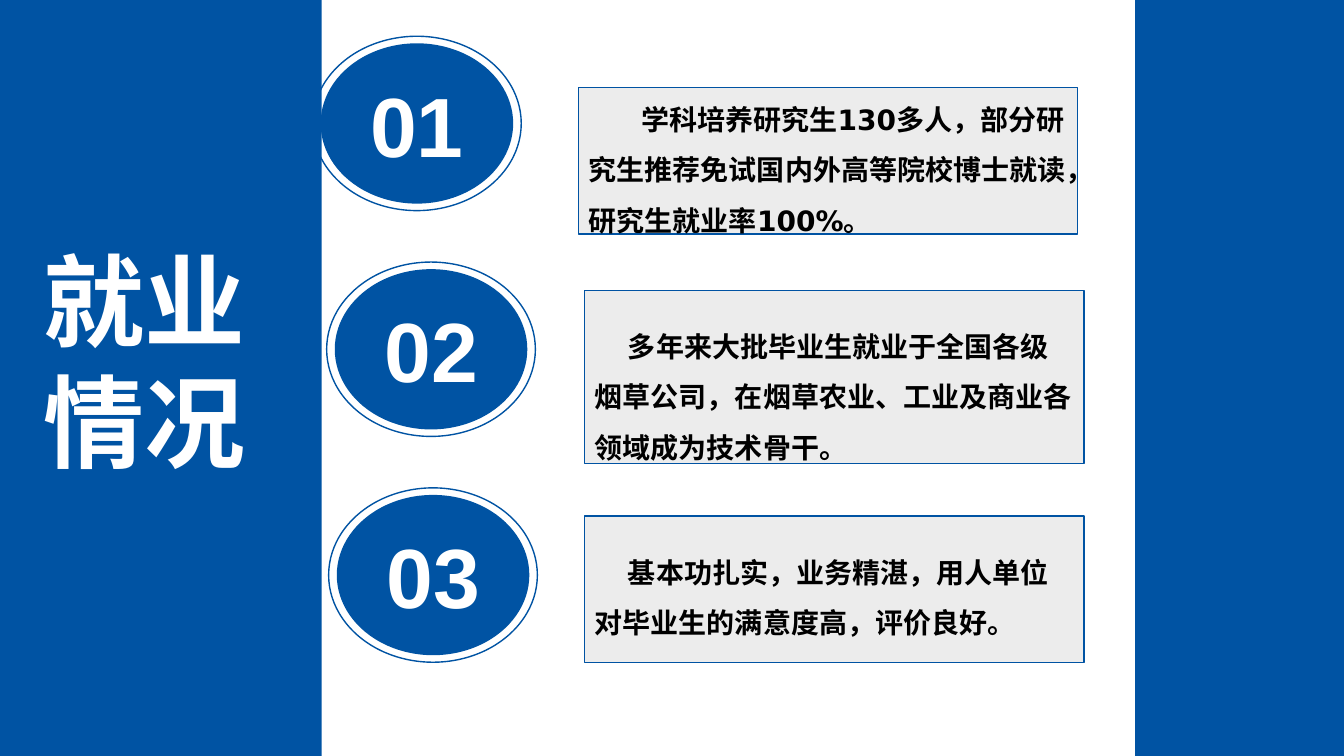
from dataclasses import dataclass

import pptx
import pptx.dml.color
import pptx.enum.shapes
import pptx.enum.text
import pptx.oxml.ns
import pptx.util

EMU_PER_PX = 9144  # 100 px to the inch
COLORS = {"blue": "0053A3", "grey": "ECECEC", "white": "FFFFFF", "black": "000000"}
CJK_FONT = "Noto Sans CJK SC"
SLIDE_WIDTH, SLIDE_HEIGHT = 1333, 750
RECTANGLE = pptx.enum.shapes.MSO_SHAPE.RECTANGLE
OVAL = pptx.enum.shapes.MSO_SHAPE.OVAL

DISC_WIDTH, DISC_HEIGHT = 191, 159
FIRST_DISC_TOP, DISC_PITCH = 43, 224
RING_GAP_X, RING_GAP_Y = 8, 7
PANEL_WIDTH = 495


@dataclass
class Item:
    disc_left: int
    panel_left: int
    panel_top: int
    panel_height: int
    text_top: int
    text_height: int
    indent: int
    text: str


ITEMS = [
    Item(318, 574, 87, 145, 80, 162, 52,
         "学科培养研究生130多人，部分研究生推荐免试国内外高等院校博士就读，研究生就业率100%。"),
    Item(332, 580, 288, 172, 305, 162, 33,
         "多年来大批毕业生就业于全国各级烟草公司，在烟草农业、工业及商业各领域成为技术骨干。"),
    Item(334, 580, 512, 145, 529, 105, 33,
         "基本功扎实，业务精湛，用人单位对毕业生的满意度高，评价良好。"),
]


def px(length: int) -> pptx.util.Emu:
    return pptx.util.Emu(length * EMU_PER_PX)


def rgb(name: str) -> pptx.dml.color.RGBColor:
    return pptx.dml.color.RGBColor.from_string(COLORS[name])


def add_box(slide, kind, left: int, top: int, width: int, height: int,
            fill: str = "", line: str = ""):
    shape = slide.shapes.add_shape(kind, px(left), px(top), px(width), px(height))
    shape.shadow.inherit = False
    if fill:
        shape.fill.solid()
        shape.fill.fore_color.rgb = rgb(fill)
    else:
        shape.fill.background()
    if line:
        shape.line.color.rgb = rgb(line)
        shape.line.width = pptx.util.Pt(1)
    else:
        shape.line.fill.background()
    return shape


def write(shape, text: str, size: int, latin: str, color: str, centered: bool = True):
    """Fill a shape with one bold paragraph and return the paragraph."""
    shape.text_frame.text = text
    shape.text_frame.word_wrap = True
    paragraph = shape.text_frame.paragraphs[0]
    align = pptx.enum.text.PP_ALIGN
    paragraph.alignment = align.CENTER if centered else align.LEFT
    font = paragraph.runs[0].font
    font.size, font.bold, font.name = pptx.util.Pt(size), True, latin
    font.color.rgb = rgb(color)
    properties = paragraph.runs[0].font._element
    east_asian = properties.makeelement(pptx.oxml.ns.qn("a:ea"), {"typeface": CJK_FONT})
    properties.find(pptx.oxml.ns.qn("a:latin")).addnext(east_asian)
    return paragraph


def add_title(slide, text: str) -> None:
    title = slide.shapes.title
    title.left, title.top, title.width, title.height = px(11), px(232), px(264), px(252)
    write(title, text, 72, CJK_FONT, "white")
    title.text_frame.auto_size = pptx.enum.text.MSO_AUTO_SIZE.NONE
    title.text_frame.vertical_anchor = pptx.enum.text.MSO_ANCHOR.TOP
    title.element.getparent().append(title.element)  # in front of the side bands


def add_number(slide, number: int, left: int) -> None:
    top = FIRST_DISC_TOP + (number - 1) * DISC_PITCH
    disc = add_box(slide, OVAL, left, top, DISC_WIDTH, DISC_HEIGHT, fill="blue")
    write(disc, f"{number:02d}", 60, "Arial", "white")
    disc.text_frame.vertical_anchor = pptx.enum.text.MSO_ANCHOR.MIDDLE
    add_box(slide, OVAL, left - RING_GAP_X, top - RING_GAP_Y,
            DISC_WIDTH + 2 * RING_GAP_X, DISC_HEIGHT + 2 * RING_GAP_Y, line="blue")


def add_panel(slide, item: Item) -> None:
    add_box(slide, RECTANGLE, item.panel_left, item.panel_top,
            PANEL_WIDTH, item.panel_height, fill="grey", line="blue")
    text_box = slide.shapes.add_textbox(px(item.panel_left), px(item.text_top),
                                        px(PANEL_WIDTH), px(item.text_height))
    paragraph = write(text_box, item.text, 20, "DejaVu Sans", "black", centered=False)
    paragraph.line_spacing = 1.5
    paragraph_properties = paragraph._p.get_or_add_pPr()
    paragraph_properties.set("marL", "0")
    paragraph_properties.set("indent", str(px(item.indent)))


def main() -> None:
    presentation = pptx.Presentation()
    presentation.slide_width, presentation.slide_height = px(SLIDE_WIDTH), px(SLIDE_HEIGHT)
    slide = presentation.slides.add_slide(presentation.slide_layouts[5])

    # Side bands and title
    for left, width in ((0, 319), (1126, 207)):
        add_box(slide, RECTANGLE, left, 0, width, SLIDE_HEIGHT, fill="blue")
    add_title(slide, "就业情况")

    # Numbered discs, then their text panels
    for number, item in enumerate(ITEMS, start=1):
        add_number(slide, number, item.disc_left)
    for item in ITEMS:
        add_panel(slide, item)

    presentation.save("out.pptx")


if __name__ == "__main__":
    main()
